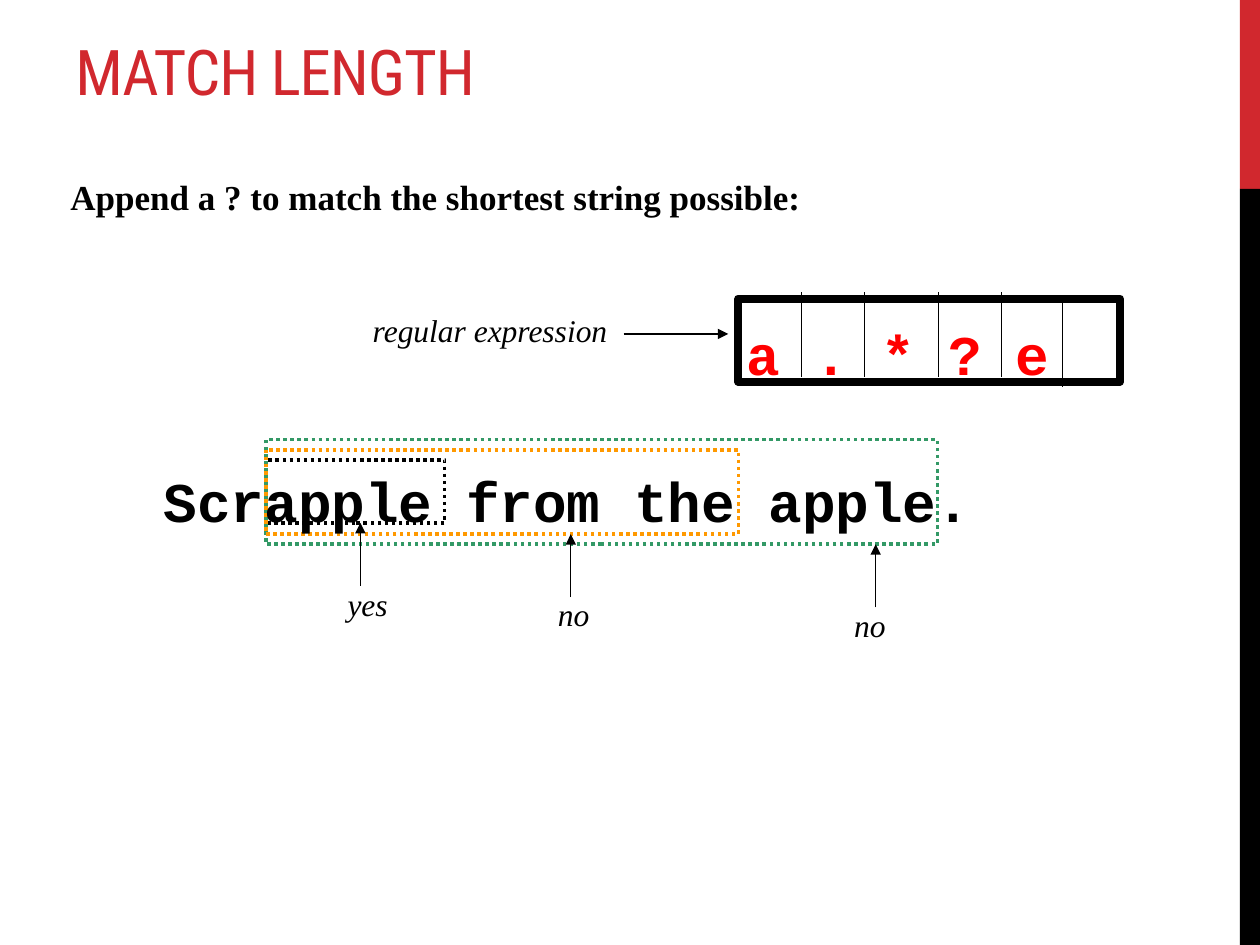
from lxml import etree
from pptx import Presentation
from pptx import util as u
from pptx.dml.color import RGBColor
from pptx.enum import dml, shapes, text
from pptx.oxml import ns

COLORS = {"accent": "D1282E", "ink": "000000", "pattern": "FF0000",
          "longest": "339966", "middle": "FF9900"}

deck = Presentation()
deck.slide_width, deck.slide_height = u.Inches(10), u.Inches(7.5)
COLUMN, ROW = deck.slide_width / 100, deck.slide_height / 75
page = deck.slides.add_slide(deck.slide_layouts[6])


def grid(left, top, width, height):
    return [round(left * COLUMN), round(top * ROW),
            round(width * COLUMN), round(height * ROW)]


def connect(start, end, arrow=False):
    line = page.shapes.add_connector(shapes.MSO_CONNECTOR.STRAIGHT, *grid(*start, *end))
    line.line.color.rgb = RGBColor.from_string(COLORS["ink"])
    line.line.width = u.Pt(0.75)
    if arrow:
        etree.SubElement(line.line._get_or_add_ln(), ns.qn("a:tailEnd"), type="triangle")
    etree.SubElement(line._element.spPr, ns.qn("a:effectLst"))


for top, height, color in [(0, 15, "accent"), (15, 60, "ink")]:
    band = page.shapes.add_shape(shapes.MSO_SHAPE.RECTANGLE, *grid(98.4, top, 1.6, height))
    band.shadow.inherit = False
    band.fill.solid()
    band.fill.fore_color.rgb = RGBColor.from_string(COLORS[color])
    band.line.fill.background()

frames = [
    ((21.1, 36.5, 14.2, 5), "ink", 2, True),
    ((21.1, 34.9, 53.3, 8.3), "longest", 2, True),
    ((21.1, 35.7, 37.5, 6.7), "middle", 2, True),
    ((58.6, 23.7, 30.3, 6.6), "ink", 4.5, False),
]
for place, color, weight, dotted in frames:
    frame = page.shapes.add_shape(shapes.MSO_SHAPE.RECTANGLE, *grid(*place))
    frame.shadow.inherit = False
    frame.fill.background()
    frame.line.color.rgb = RGBColor.from_string(COLORS[color])
    frame.line.width = u.Pt(weight)
    if dotted:
        frame.line.dash_style = dml.MSO_LINE.ROUND_DOT

styles = {
    "title": ("Roboto Condensed", 36, "accent", False, False, 0.5),
    "body": ("Times New Roman", 20, "ink", True, False, 0.9),
    "code": ("Courier New", 32, "ink", True, False, 1.3),
    "pattern": ("Courier New", 32, "pattern", True, False, 1.3),
    "label": ("Times New Roman", 18, "ink", False, True, 0.7),
}
texts = [
    ("MATCH LENGTH", "title", (5, 0.3, 93.4, 8.8)),
    ("Append a ? to match the shortest string possible:", "body", (4.6, 13, 89.8, 7.7)),
    ("Scrapple from the apple.", "code", (12, 35.7, 67.5, 6.3)),
    ("a . * ? e", "pattern", (58.3, 24.1, 27.4, 6.4)),
    ("regular expression", "label", (28.6, 24, 20.8, 4)),
    ("yes", "label", (26.6, 45.7, 5.2, 4)),
    ("no", "label", (43.3, 46.5, 4.5, 4)),
    ("no", "label", (66.8, 47.4, 4.5, 4)),
]
for wording, style, place in texts:
    font, size, color, bold, italic, inset = styles[style]
    box = page.shapes.add_textbox(*grid(*place))
    box.text_frame.text = wording
    box.text_frame.word_wrap = style != "label"
    box.text_frame.margin_top = round(inset * ROW)
    span = box.text_frame.paragraphs[0].runs[0]
    span.font.name, span.font.size = font, u.Pt(size)
    span.font.bold, span.font.italic = bold, italic
    span.font.color.rgb = RGBColor.from_string(COLORS[color])
    if style == "title":
        box.text_frame.vertical_anchor = text.MSO_ANCHOR.BOTTOM
        span._r.get_or_add_rPr().set("spc", "-60")

for column, top in [(63.6, 23.2), (68.6, 23.2), (74.5, 23.2), (79.5, 23.2), (84.3, 24)]:
    connect((column, top), (column, top + 6.7))

connect((49.5, 26.5), (57.8, 26.5), arrow=True)
for column, tip in [(28.6, 41.5), (45.3, 42.4), (69.5, 43.2)]:
    connect((column, tip + 5), (column, tip), arrow=True)

deck.save("out.pptx")
